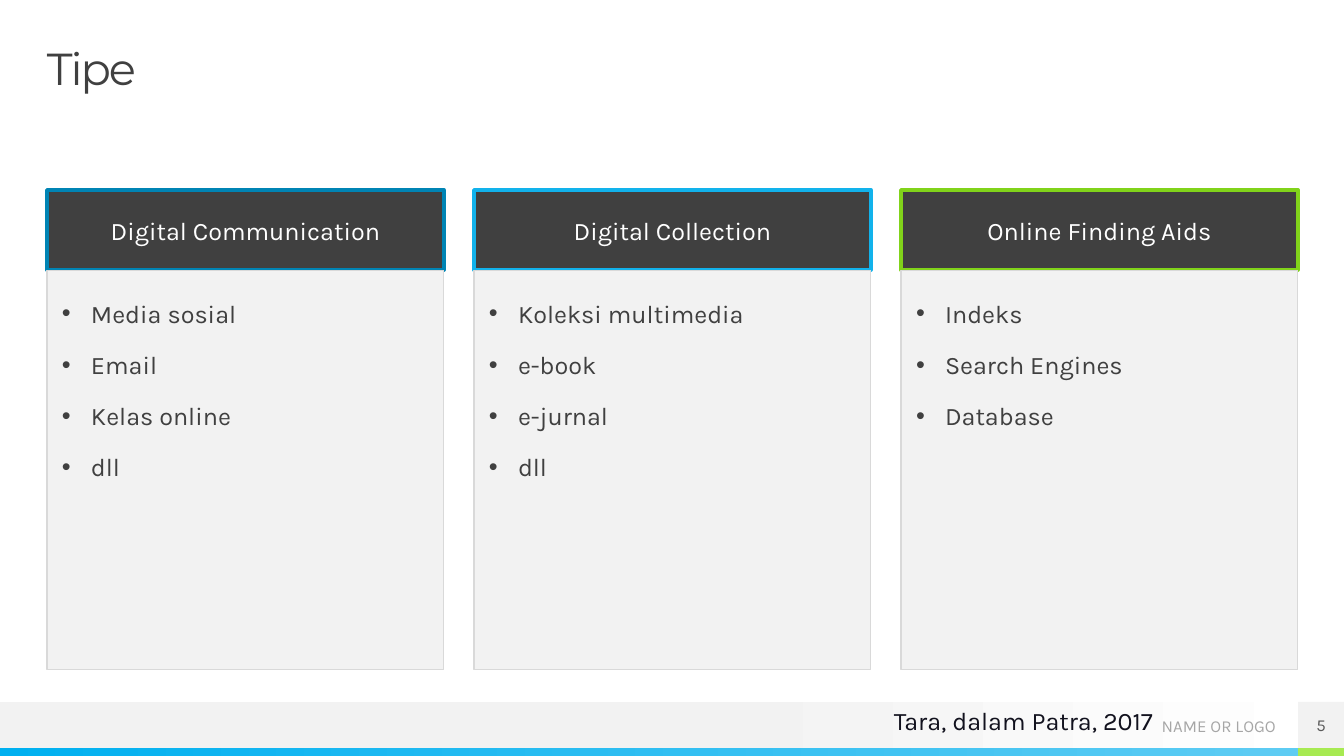
from lxml.etree import SubElement as Sub
from pptx import Presentation
from pptx.dml.color import RGBColor
from pptx.enum.shapes import MSO_SHAPE as Kind
from pptx.enum.text import MSO_ANCHOR as Anchor, MSO_AUTO_SIZE as Auto, PP_ALIGN as Align
from pptx.oxml.ns import qn
from pptx.util import Emu, Pt

SCALE = 914400 / 100.8
DARK = "404040"
PALE = "F2F2F2"
COLUMNS = [
    ("Digital Communication", "0084B4", ["Media sosial", "Email", "Kelas online", "dll"]),
    ("Digital Collection", "12B2EB", ["Koleksi multimedia", "e-book", "e-jurnal", "dll"]),
    ("Online Finding Aids", "81D31A", ["Indeks", "Search Engines", "Database"]),
]


def px(n):
    return Emu(round(n * SCALE))


def color(code):
    return RGBColor.from_string(code)


class Deck:
    font = "Karla"
    head = "Montserrat"

    def __init__(self, wide, high):
        self.show = Presentation()
        self.show.slide_width, self.show.slide_height = px(wide), px(high)
        self.slide = self.show.slides.add_slide(self.show.slide_layouts[4])
        self.holders = {h.placeholder_format.idx: h for h in self.slide.placeholders}

    def box(self, place, fill, line=None, weight=0.75):
        shape = self.slide.shapes.add_shape(Kind.RECTANGLE, *map(px, place))
        shape.shadow.inherit = False
        self.paint(shape, fill, line, weight)
        return shape

    def paint(self, shape, fill, line=None, weight=0.75):
        shape.fill.solid()
        shape.fill.fore_color.rgb = color(fill)
        if line:
            shape.line.color.rgb = color(line)
            shape.line.width = Pt(weight)
        else:
            shape.line.fill.background()

    def fade(self, place, first, last, start=0):
        shape = self.box(place, first)
        shape.fill.gradient()
        shape.fill.gradient_angle = 0
        for stop, code, at in zip(shape.fill.gradient_stops, (first, last), (start, 1)):
            stop.color.rgb = color(code)
            stop.position = at

    def holder(self, key, place):
        shape = self.holders[key]
        shape.left, shape.top, shape.width, shape.height = map(px, place)
        shape.element.getparent().append(shape.element)
        return shape

    def label(self, place):
        return self.slide.shapes.add_textbox(*map(px, place))

    def text(self, shape, lines, size, ink, align=Align.LEFT, anchor=Anchor.TOP,
             inset=(0, 0, 0, 0), gaps=(0, 0), font=None, bullet=False):
        frame = shape.text_frame
        frame.word_wrap = True
        frame.auto_size = Auto.NONE
        frame.vertical_anchor = anchor
        (frame.margin_left, frame.margin_top,
         frame.margin_right, frame.margin_bottom) = map(px, inset)
        frame.text = "\n".join(lines)
        for para in frame.paragraphs:
            para.alignment = align
            para.line_spacing = 1.0
            para.space_before, para.space_after = map(Pt, gaps)
            self.mark(para, ink, bullet)
            para.font.name = font or self.font
            para.font.size = Pt(size)
            para.font.bold = False
            para.font.color.rgb = color(ink)
        return frame

    def mark(self, para, ink, bullet):
        props = para._p.get_or_add_pPr()
        indent = px(29) if bullet else 0
        props.set("marL", str(indent))
        props.set("indent", str(-indent))
        if bullet:
            Sub(Sub(props, qn("a:buClr")), qn("a:srgbClr")).set("val", ink)
            Sub(props, qn("a:buFont")).set("typeface", "Arial")
            Sub(props, qn("a:buChar")).set("char", "•")
        else:
            Sub(props, qn("a:buNone"))

    def title(self, place, text):
        frame = self.text(self.holder(0, place), [text], 32, DARK, font=self.head)
        para = frame.paragraphs[0]
        para.line_spacing = 0.9
        para.runs[0]._r.get_or_add_rPr().set("spc", "-150")

    def column(self, key, left, name, edge, items):
        top = self.box((left, 190, 397, 80), DARK, edge, 2.5)
        self.text(top, [name], 18, "FFFFFF", Align.CENTER, Anchor.MIDDLE,
                  (12, 4, 12, 4), (10, 5))
        body = self.holder(key, (left, 270, 397, 400))
        self.paint(body, PALE, "D9D9D9")
        self.text(body, items, 18, DARK, inset=(15, 28, 15, 0), gaps=(10, 5), bullet=True)

    def footer(self):
        self.fade((0, 702, 1344, 46), PALE, "FFFFFF", 0.53)
        self.fade((0, 748, 1298, 8), "00B0F0", "5ECCF3")
        self.box((1298, 748, 46, 8), "A7EA52")
        self.text(self.label((1050, 702, 226, 47)), ["NAME OR LOGO"], 12, "A6A6A6",
                  Align.RIGHT, Anchor.MIDDLE)
        self.text(self.holder(4, (47, 705, 1106, 39)), ["Tara, dalam Patra, 2017"],
                  18, "12121E", Align.RIGHT, gaps=(10, 5))
        self.text(self.box((1298, 702, 46, 46), PALE), ["5"], 12, "595959",
                  Align.CENTER, Anchor.MIDDLE)


def main():
    deck = Deck(1344, 756)
    deck.footer()
    deck.title((47, 47, 1250, 47), "Tipe")
    for i, (name, edge, items) in enumerate(COLUMNS):
        deck.column(i + 1, 47 + 427 * i, name, edge, items)
    deck.show.save("out.pptx")


if __name__ == "__main__":
    main()
